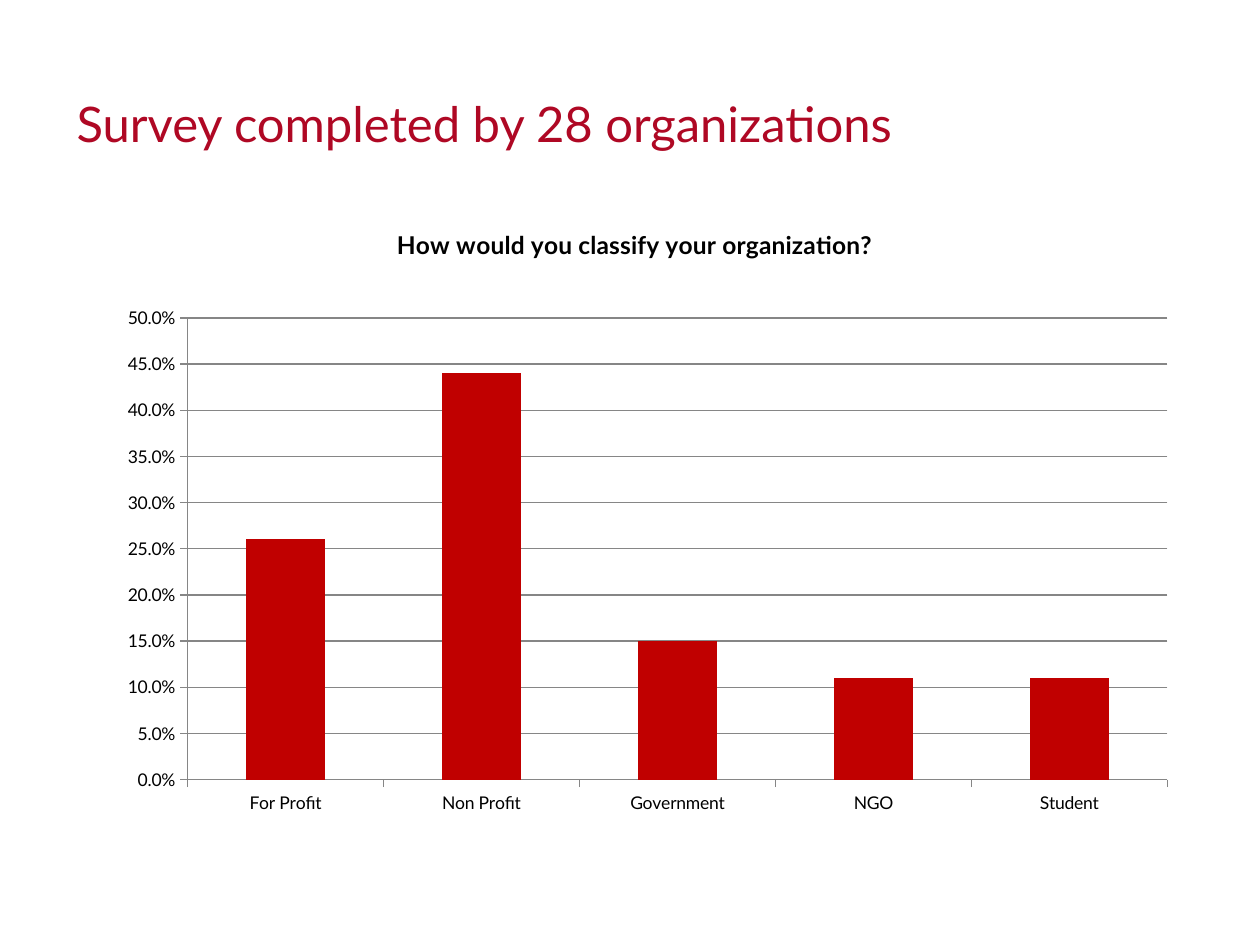
from lxml.etree import SubElement
from pptx import Presentation
from pptx.chart.data import CategoryChartData
from pptx.dml.color import RGBColor
from pptx.enum.chart import XL_CHART_TYPE as ChartType, XL_TICK_MARK as TickMark
from pptx.enum.text import MSO_ANCHOR as Anchor
from pptx.oxml.ns import qn
from pptx.util import Inches, Pt

CRIMSON = RGBColor(0xAF, 0x08, 0x24)
BAR_RED = RGBColor(0xC0, 0x00, 0x00)
AXIS_GRAY = RGBColor(0x86, 0x86, 0x86)
BLACK = RGBColor(0x00, 0x00, 0x00)


class SurveySlide:
    """Holds the style and the current slide."""
    font_name = "Lato"

    def __init__(self, deck):
        self.slide = deck.slides.add_slide(deck.slide_layouts[6])

    def style(self, font, size, color, bold=False):
        font.name = self.font_name
        font.size = Pt(size)
        font.bold = bold
        font.color.rgb = color

    def heading(self, text, left, top, width, height):
        box = self.slide.shapes.add_textbox(
            Inches(left), Inches(top), Inches(width), Inches(height))
        frame = box.text_frame
        frame.word_wrap = True
        frame.vertical_anchor = Anchor.MIDDLE
        frame.text = text
        self.style(frame.paragraphs[0].runs[0].font, 28, CRIMSON)

    def place(self, element, index, **settings):
        """Give a chart part a manual layout."""
        for old in element.findall(qn("c:layout")):
            element.remove(old)
        layout = SubElement(element, qn("c:layout"))
        element.insert(index, layout)
        manual = SubElement(layout, qn("c:manualLayout"))
        for name, value in settings.items():
            SubElement(manual, qn(f"c:{name}")).set("val", str(value))

    def column_chart(self, question, shares, left, top, width, height):
        data = CategoryChartData(number_format="0.0%")
        data.categories = list(shares)
        data.add_series("Series 1", list(shares.values()))
        chart = self.slide.shapes.add_chart(
            ChartType.COLUMN_CLUSTERED, Inches(left), Inches(top),
            Inches(width), Inches(height), data).chart
        self.style(chart.font, 10, BLACK)
        chart.has_legend = False

        # Question above the plot
        chart.has_title = True
        title = chart.chart_title
        title.text_frame.text = question
        self.style(title.text_frame.paragraphs[0].runs[0].font, 14, BLACK, bold=True)
        title_xml = title._element
        title_xml.find(qn("c:overlay")).set("val", "1")
        self.place(title_xml, 1, xMode="edge", yMode="edge", x=0.29, y=0.04)

        # Plot area and bars
        plot = chart.plots[0]
        self.place(plot._element.getparent(), 0, layoutTarget="inner",
                   xMode="edge", yMode="edge", x=0.109, y=0.182, w=0.866, h=0.685)
        plot.gap_width = 150
        plot.vary_by_categories = False
        fill = plot.series[0].format.fill
        fill.solid()
        fill.fore_color.rgb = BAR_RED

        # Axes and gridlines
        scale = chart.value_axis
        scale.minimum_scale, scale.maximum_scale, scale.major_unit = 0, 0.5, 0.05
        scale.has_major_gridlines = True
        scale.tick_labels.number_format = "0.0%"
        scale.tick_labels.number_format_is_linked = False
        for axis in (chart.category_axis, scale):
            axis.major_tick_mark = TickMark.OUTSIDE
            axis.minor_tick_mark = TickMark.NONE
        for part in (chart.category_axis, scale, scale.major_gridlines):
            part.format.line.color.rgb = AXIS_GRAY
            part.format.line.width = Pt(0.75)


def main():
    deck = Presentation()
    deck.slide_width, deck.slide_height = Inches(10), Inches(7.5)
    survey = SurveySlide(deck)

    # Heading
    survey.heading("Survey completed by 28 organizations", 0.51, 0.63, 8.43, 0.69)

    # Share of each kind of organization
    shares = {"For Profit": 0.26, "Non Profit": 0.44, "Government": 0.15,
              "NGO": 0.11, "Student": 0.11}
    survey.column_chart("How would you classify your organization?", shares,
                        0.51, 1.55, 8.98, 5.35)

    deck.save("out.pptx")


if __name__ == "__main__":
    main()
